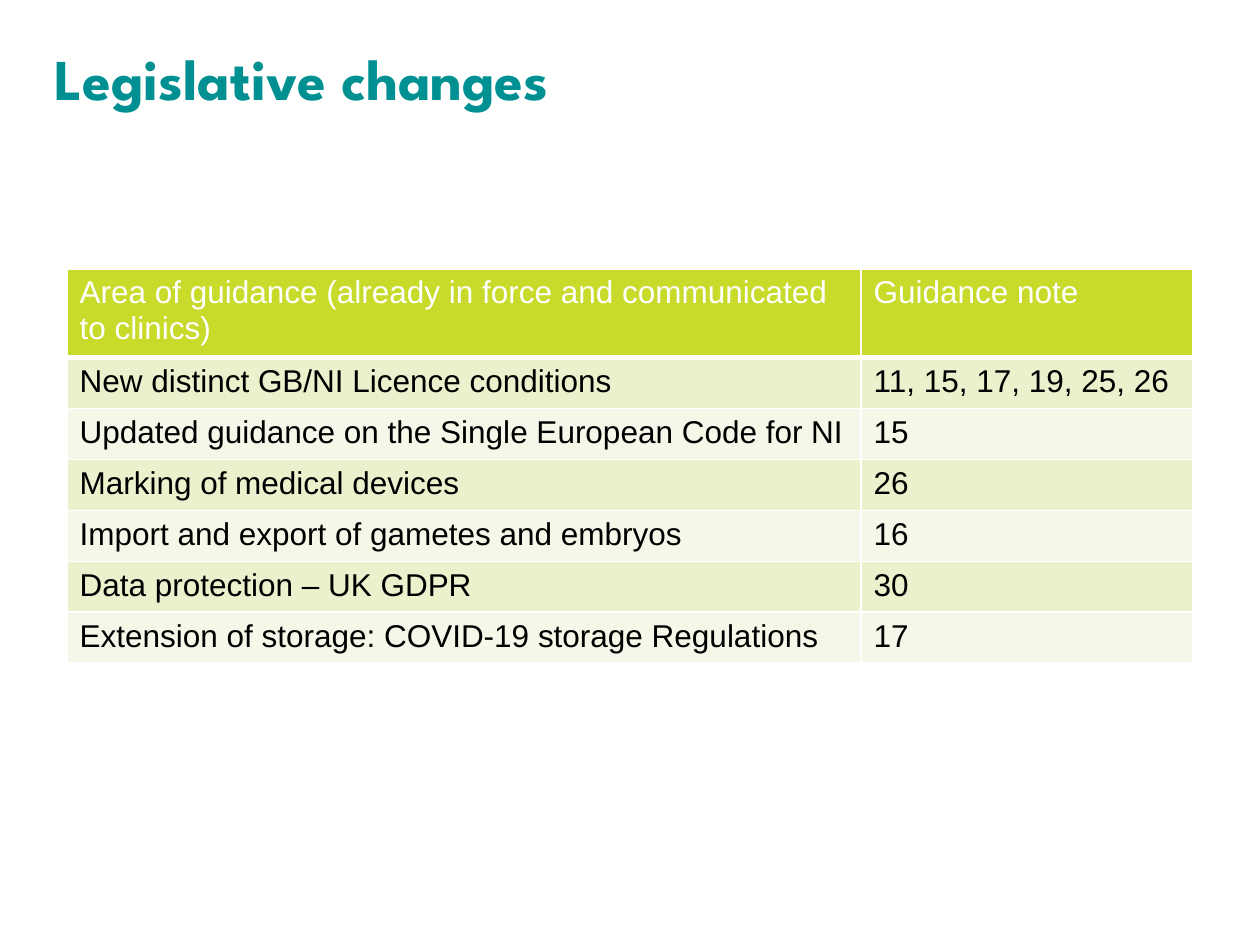
from lxml.etree import SubElement
from pptx import Presentation
from pptx.dml.color import RGBColor
from pptx.enum.text import MSO_ANCHOR, MSO_AUTO_SIZE, PP_ALIGN
from pptx.oxml.ns import qn
from pptx.util import Emu, Pt

TEAL = RGBColor(0x00, 0x90, 0x91)
LIME = RGBColor(0xC8, 0xDA, 0x2A)
BAND_DARK = RGBColor(0xEB, 0xF1, 0xCD)
BAND_LIGHT = RGBColor(0xF5, 0xF8, 0xE8)
WHITE = RGBColor(0xFF, 0xFF, 0xFF)
BLACK = RGBColor(0x00, 0x00, 0x00)

PX_PER_INCH = 126
HEADER_HEIGHT, ROW_HEIGHT = 82, 51

GUIDANCE = [
    ("Area of guidance (already in force and communicated to clinics)", "Guidance note"),
    ("New distinct GB/NI Licence conditions", "11, 15, 17, 19, 25, 26"),
    ("Updated guidance on the Single European Code for NI", "15"),
    ("Marking of medical devices", "26"),
    ("Import and export of gametes and embryos", "16"),
    ("Data protection – UK GDPR", "30"),
    ("Extension of storage: COVID-19 storage Regulations", "17"),
]


def px(n):
    return Emu(round(n * 914400 / PX_PER_INCH))


class SlideBuilder:
    title_font = "League Spartan"
    body_font = "Arial"

    def __init__(self, slide):
        self.s = slide

    def style(self, p, font, size, color, bold=False):
        p.font.name = font
        p.font.size = Pt(size)
        p.font.bold = bold
        p.font.color.rgb = color

    def title(self, text, x, y, w, h):
        sp = self.s.shapes.title
        sp.left, sp.top, sp.width, sp.height = px(x), px(y), px(w), px(h)
        tf = sp.text_frame
        tf.text = text
        tf.word_wrap = True
        tf.auto_size = MSO_AUTO_SIZE.SHAPE_TO_FIT_TEXT
        tf.vertical_anchor = MSO_ANCHOR.TOP
        tf.margin_left = tf.margin_right = tf.margin_top = tf.margin_bottom = 0
        p = tf.paragraphs[0]
        p.alignment = PP_ALIGN.LEFT
        p.line_spacing = Pt(33)
        self.style(p, self.title_font, 33, TEAL, bold=True)

    def borders(self, cell, bottom):
        tc_pr = cell._tc.get_or_add_tcPr()
        for side, width in (("L", 1), ("R", 1), ("T", 1), ("B", bottom)):
            ln = SubElement(tc_pr, qn(f"a:ln{side}"), w=str(Pt(width)))
            fill = SubElement(ln, qn("a:solidFill"))
            SubElement(fill, qn("a:srgbClr"), val=str(WHITE))

    def table(self, rows, x, y, col_widths, row_heights):
        table = self.s.shapes.add_table(
            len(rows), len(col_widths), px(x), px(y),
            px(sum(col_widths)), px(sum(row_heights))).table
        for column, width in zip(table.columns, col_widths):
            column.width = px(width)
        for i, (values, height) in enumerate(zip(rows, row_heights)):
            table.rows[i].height = px(height)
            header = i == 0
            band = LIME if header else BAND_DARK if i % 2 else BAND_LIGHT
            for cell, value in zip(table.rows[i].cells, values):
                cell.text = value
                self.style(cell.text_frame.paragraphs[0], self.body_font, 18,
                           WHITE if header else BLACK)
                self.borders(cell, bottom=3 if header else 1)
                cell.fill.solid()
                cell.fill.fore_color.rgb = band


def main():
    prs = Presentation()
    prs.slide_width, prs.slide_height = px(1260), px(945)
    builder = SlideBuilder(prs.slides.add_slide(prs.slide_layouts[5]))

    # Heading
    builder.title("Legislative changes", 54, 54, 1150, 60)

    # Guidance table
    row_heights = [HEADER_HEIGHT] + [ROW_HEIGHT] * (len(GUIDANCE) - 1)
    builder.table(GUIDANCE, 67, 269, [794, 332], row_heights)

    prs.save("out.pptx")


if __name__ == "__main__":
    main()
